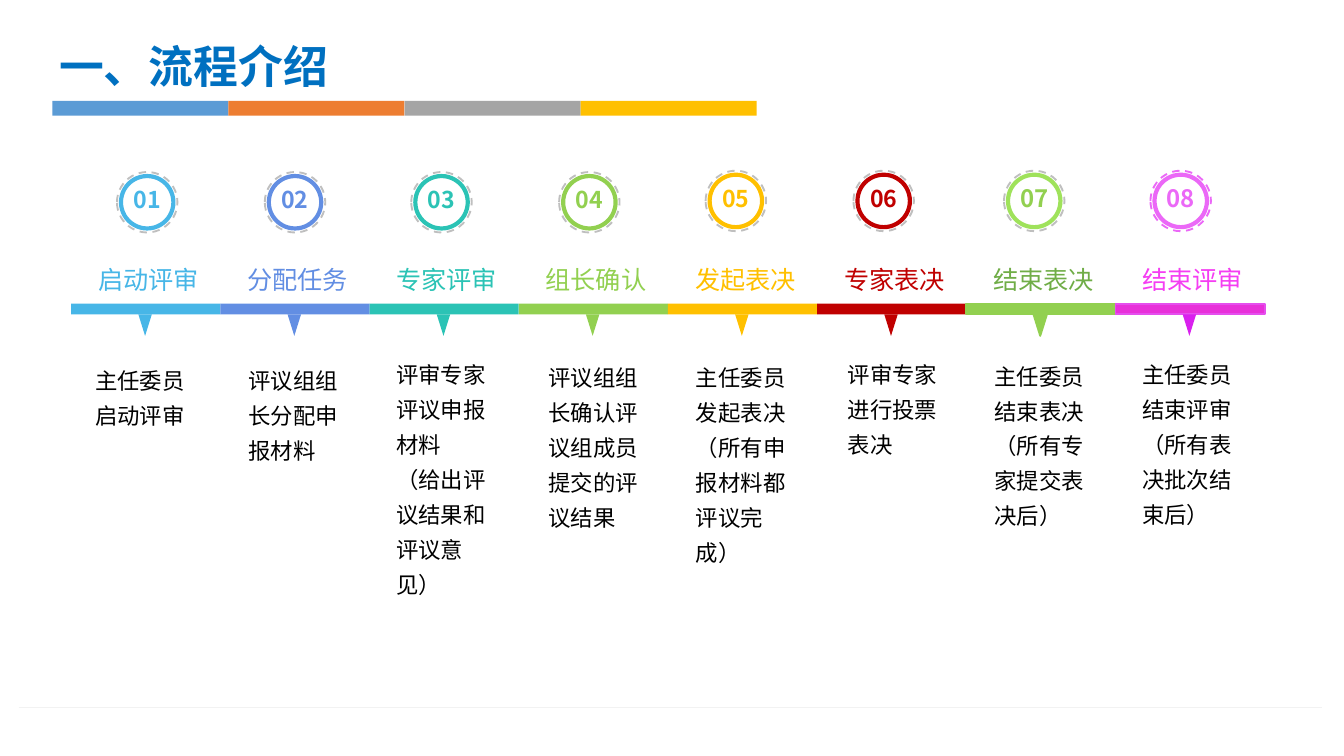
"""Build a slide showing an eight-step review process."""
from lxml import etree
from pptx import Presentation, util as u
from pptx.dml.color import RGBColor
from pptx.enum import dml, shapes, text
from pptx.oxml.ns import qn

SANS = "Noto Sans CJK SC"
GREY = "BFBFBF"
KIND = shapes.MSO_SHAPE


def write(box, words, size, hue, font=SANS, bold=False, align="LEFT", space=None, side=0.1,
          wrap=True, anchor="TOP"):
    frame = box.text_frame
    frame.word_wrap = wrap
    frame.auto_size = text.MSO_AUTO_SIZE.NONE
    frame.vertical_anchor = text.MSO_ANCHOR[anchor]
    frame.margin_left = frame.margin_right = u.Inches(side)
    frame.margin_top = frame.margin_bottom = u.Inches(0.05)
    frame.text = words
    for para in frame.paragraphs:
        para.alignment = text.PP_ALIGN[align]
        para.line_spacing = space
        para.space_before = u.Pt(0)
        for run in para.runs:
            run.font.size = u.Pt(size)
            run.font.bold = bold
            run.font.color.rgb = RGBColor.from_string(hue)
            run.font.name = font
            etree.SubElement(run.font._element, qn("a:ea"), typeface=SANS)


def draw(kind, x, y, w, h, fill=None, line=None, width=1):
    shape = deck.add_shape(kind, u.Inches(x), u.Inches(y), u.Inches(w), u.Inches(h))
    shape.shadow.inherit = False
    if fill:
        shape.fill.solid()
        shape.fill.fore_color.rgb = RGBColor.from_string(fill)
    else:
        shape.fill.background()
    if line:
        shape.line.color.rgb = RGBColor.from_string(line)
        shape.line.width = u.Pt(width)
    else:
        shape.line.fill.background()
    return shape


show = Presentation()
show.slide_width, show.slide_height = u.Inches(10), u.Inches(5.625)
slide = show.slides.add_slide(show.slide_layouts[5])
deck = slide.shapes

rule = deck.add_connector(shapes.MSO_CONNECTOR.STRAIGHT, u.Inches(0.14), u.Inches(5.26),
                          u.Inches(9.84), u.Inches(5.26))
rule.line.color.rgb = RGBColor.from_string("F2F2F2")
rule.line.width = u.Pt(0.25)
etree.SubElement(rule._element.spPr, qn("a:effectLst"))

title = deck.title
title.left, title.top = u.Inches(0.39), u.Inches(0.24)
title.width, title.height = u.Inches(2.11), u.Inches(0.5)
write(title, "一、流程介绍", 24, "0070C0", bold=True, side=0.05, wrap=False, anchor="MIDDLE")

for i, hue in enumerate(["5B9BD5", "ED7D31", "A5A5A5", "FFC000"]):
    draw(KIND.RECTANGLE, 0.39 + 1.31 * i, 0.75, 1.31, 0.11, hue)

steps = [
    ("启动评审", ["47B6E7"] * 2, None, "47B6E7", ["47B6E7"] * 2, GREY, 0.87),
    ("分配任务", ["628EE3"] * 2, None, "628EE3", ["628EE3"] * 2, GREY, 1.97),
    ("专家评审", ["2BC3B5"] * 2, None, "2BC3B5", ["2BC3B5"] * 2, GREY, 3.06),
    ("组长确认", ["92D050"] * 2, None, "92D050", ["92D050"] * 2, GREY, 4.16),
    ("发起表决", ["FFC000"] * 2, None, "FFC000", ["FFC000"] * 2, GREY, 5.25),
    ("专家表决", ["C00000"] * 2, None, "C00000", ["C00000"] * 2, GREY, 6.35),
    ("结束表决", ["70AD47", "92D050"], "92D050", "92D050", ["9FE25B", "92D050"], GREY, 7.47),
    ("结束评审", ["F53DF3", "E830D9"], "E54EEE", "D920EE", ["EB68F7"] * 2, "EB68F7", 8.56),
]
for i, (name, (hue, bar), edge, tip, (ring, digit), dash, left) in enumerate(steps):
    x = 0.53 + 1.11 * i
    draw(KIND.RECTANGLE, x, 2.26, 1.11, 0.08, bar, edge)
    point = draw(KIND.ISOSCELES_TRIANGLE, x + 0.5, 2.34, 0.1, 0.16, tip, tip if i == 6 else None)
    point._element.spPr.xfrm.set("flipV", "1")
    label = deck.add_textbox(u.Inches(x), u.Inches(1.85), u.Inches(1.15), u.Inches(0.34))
    write(label, name, 13.5, hue, font="Arial", align="CENTER", space=u.Pt(21))
    top = 1.28 if i < 4 else 1.27
    disc = draw(KIND.OVAL, left + 0.03, top + 0.03, 0.39, 0.39, line=ring, width=2.25)
    write(disc, f"{i + 1:02}", 12.4 if i < 6 else 12.8, digit, bold=True, align="CENTER",
          space=0.8, side=0, anchor="MIDDLE")
    halo = draw(KIND.OVAL, left, top, 0.45, 0.45, line=dash)
    halo.line.dash_style = dml.MSO_LINE.DASH

notes = [
    (0.61, 2.62, 0.91, 0.87, "主任委员启动评审"),
    (1.75, 2.62, 0.88, 0.61, "评议组组长分配申报材料"),
    (2.85, 2.58, 0.89, 1.81, "评审专家评议申报材料\n（给出评议结果和评议意见）"),
    (4.03, 2.6, 0.79, 1.41, "评议组组长确认评议组成员提交的评议结果"),
    (5.08, 2.6, 1, 2.13, "主任委员发起表决（所有申报材料都评议完成）"),
    (6.21, 2.58, 0.93, 2.06, "评审专家进行投票表决"),
    (7.3, 2.59, 0.91, 1.31, "主任委员结束表决（所有专家提交表决后）"),
    (8.4, 2.58, 0.91, 0.82, "主任委员结束评审\n（所有表决批次结束后）"),
]
for i, (x, y, w, h, words) in enumerate(notes):
    note = deck.add_textbox(u.Inches(x), u.Inches(y), u.Inches(w), u.Inches(h))
    write(note, words, 12, "000000", space=u.Pt(18.7), side=0.05 if i == 3 else 0.1)

show.save("out.pptx")
